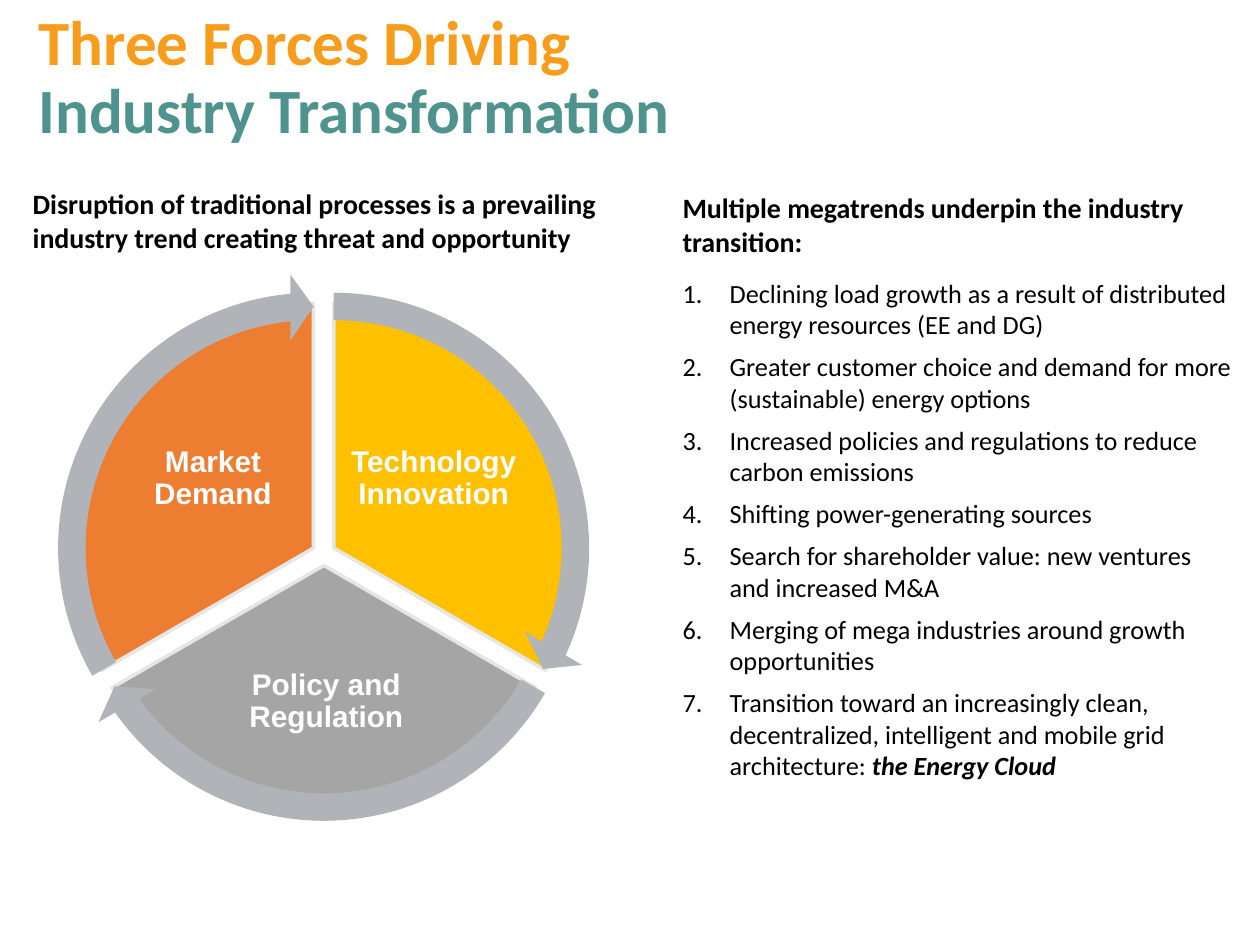
from dataclasses import dataclass

from lxml.etree import SubElement
from pptx import Presentation
from pptx.dml.color import RGBColor
from pptx.enum.shapes import MSO_SHAPE
from pptx.enum.text import MSO_ANCHOR, MSO_AUTO_SIZE, PP_ALIGN
from pptx.oxml.ns import qn
from pptx.util import Cm, Pt


@dataclass(frozen=True)
class Theme:
    orange: str = "F89C1B"
    teal: str = "4E938E"
    black: str = "000000"
    white: str = "FFFFFF"
    arrow: str = "B0B4B9"
    outline: str = "E7E6E6"
    body_font: str = "Calibri"
    label_font: str = "Arial"
    title_size: int = 36
    heading_size: int = 16
    trend_size: int = 15
    label_size: int = 17


@dataclass(frozen=True)
class Box:
    left: float
    top: float
    width: float
    height: float

    def lengths(self) -> list[Cm]:
        return [Cm(v) for v in (self.left, self.top, self.width, self.height)]


@dataclass(frozen=True)
class Force:
    """One third of the cycle; angles are in units of 5/3 degree."""
    name: str
    color: str
    center: tuple[float, float]
    pie_angles: tuple[float, float]
    arrow_angles: tuple[float, float]
    label: Box


THEME = Theme()
PIE_DIAMETER = 9.86
ARROW_DIAMETER = 11.07
ARROW_THICKNESS, ARROW_HEAD_ANGLE, ARROW_HEAD_WIDTH = 0.05, 3.28, 0.06

FORCES = [
    Force("Technology Innovation", "FFC000", (6.73, 11.05), (162, 18),
          (14.73, 161.99), Box(6.99, 8.2, 3.51, 2.92)),
    Force("Policy and Regulation", "A5A5A5", (6.53, 11.4), (18, 90),
          (86.72, 18), Box(3.94, 12.85, 5.28, 2.59)),
    Force("Market Demand", "ED7D31", (6.32, 11.05), (90, 162),
          (158.73, 90), Box(2.54, 8.2, 3.51, 2.92)),
]
TRENDS = [
    "Declining load growth as a result of distributed energy resources (EE and DG)",
    "Greater customer choice and demand for more (sustainable) energy options",
    "Increased policies and regulations to reduce carbon emissions",
    "Shifting power-generating sources",
    "Search for shareholder value: new ventures and increased M&A",
    "Merging of mega industries around growth opportunities",
    "Transition toward an increasingly clean, decentralized, intelligent "
    "and mobile grid architecture:",
]


def style_font(font, name: str, size: int, color: str, bold: bool) -> None:
    font.name, font.size, font.bold = name, Pt(size), bold
    font.color.rgb = RGBColor.from_string(color)


def set_frame(frame, inset: float, anchor: MSO_ANCHOR) -> None:
    frame.word_wrap = True
    frame.auto_size = MSO_AUTO_SIZE.NONE
    frame.vertical_anchor = anchor
    frame.margin_left = frame.margin_right = Cm(inset)
    frame.margin_top = frame.margin_bottom = Cm(inset)


def add_text_frame(slide, box: Box, inset: float, anchor: MSO_ANCHOR):
    frame = slide.shapes.add_textbox(*box.lengths()).text_frame
    set_frame(frame, inset, anchor)
    return frame


def add_title(slide) -> None:
    title = slide.shapes.title
    title.left, title.top, title.width, title.height = Box(
        0.53, -0.25, 23.47, 3.68).lengths()
    set_frame(title.text_frame, 0.25, MSO_ANCHOR.MIDDLE)
    headline = title.text_frame.paragraphs[0]
    headline.alignment = PP_ALIGN.LEFT
    headline.line_spacing = 0.9
    first = headline.add_run()
    first.text = "Three Forces Driving"
    headline.add_line_break()
    second = headline.add_run()
    second.text = "Industry Transformation"
    for run, color in ((first, THEME.orange), (second, THEME.teal)):
        style_font(run.font, THEME.body_font, THEME.title_size, color, True)


def add_centered(slide, kind: MSO_SHAPE, center: tuple[float, float],
                 diameter: float, color: str, adjustments: tuple[float, ...]):
    x, y = center
    box = Box(x - diameter / 2, y - diameter / 2, diameter, diameter)
    shape = slide.shapes.add_shape(kind, *box.lengths())
    shape.shadow.inherit = False
    for index, value in enumerate(adjustments):
        shape.adjustments[index] = value
    shape.fill.solid()
    shape.fill.fore_color.rgb = RGBColor.from_string(color)
    shape.line.fill.background()
    return shape


def add_sector(slide, force: Force) -> None:
    sector = add_centered(slide, MSO_SHAPE.PIE, force.center, PIE_DIAMETER,
                          force.color, force.pie_angles)
    sector.line.color.rgb = RGBColor.from_string(THEME.outline)
    sector.line.width = Pt(2)
    frame = add_text_frame(slide, force.label, 0.05, MSO_ANCHOR.MIDDLE)
    label = frame.paragraphs[0]
    label.text = force.name
    label.alignment = PP_ALIGN.CENTER
    label.line_spacing = 0.9
    style_font(label.font, THEME.label_font, THEME.label_size, THEME.white, True)


def add_cycle_arrow(slide, force: Force) -> None:
    add_centered(slide, MSO_SHAPE.CIRCULAR_ARROW, force.center, ARROW_DIAMETER,
                 THEME.arrow, (ARROW_THICKNESS, ARROW_HEAD_ANGLE,
                               *force.arrow_angles, ARROW_HEAD_WIDTH))


def write_heading(paragraph, text: str) -> None:
    paragraph.text = text
    style_font(paragraph.font, THEME.body_font, THEME.heading_size, THEME.black, True)


def number_paragraph(paragraph) -> None:
    properties = paragraph._p.get_or_add_pPr()
    properties.set("marL", str(Cm(0.95)))
    properties.set("indent", str(-Cm(0.95)))
    SubElement(properties, qn("a:buFont"), typeface="+mj-lt")
    SubElement(properties, qn("a:buAutoNum"), type="arabicPeriod")


def add_megatrends(slide) -> None:
    frame = add_text_frame(slide, Box(13.51, 3.18, 11.61, 13.23), 0.25,
                           MSO_ANCHOR.MIDDLE)
    write_heading(frame.paragraphs[0],
                  "Multiple megatrends underpin the industry transition:")
    for index, text in enumerate(TRENDS):
        trend = frame.add_paragraph()
        trend.text = text
        number_paragraph(trend)
        trend.space_before = Pt(6 if index else 11)
        style_font(trend.font, THEME.body_font, THEME.trend_size, THEME.black, False)
    conclusion = trend.add_run()
    conclusion.text = " the Energy Cloud"
    conclusion.font.bold = conclusion.font.italic = True


def main() -> None:
    presentation = Presentation()
    presentation.slide_width, presentation.slide_height = Cm(25.4), Cm(19.05)
    slide = presentation.slides.add_slide(presentation.slide_layouts[5])
    add_title(slide)
    for force in FORCES:
        add_sector(slide, force)
    for force in FORCES:
        add_cycle_arrow(slide, force)
    add_megatrends(slide)
    disruption = add_text_frame(slide, Box(0.66, 3.76, 11.73, 1.65), 0, MSO_ANCHOR.TOP)
    write_heading(disruption.paragraphs[0],
                  "Disruption of traditional processes is a prevailing "
                  "industry trend creating threat and opportunity")
    presentation.save("out.pptx")


if __name__ == "__main__":
    main()
